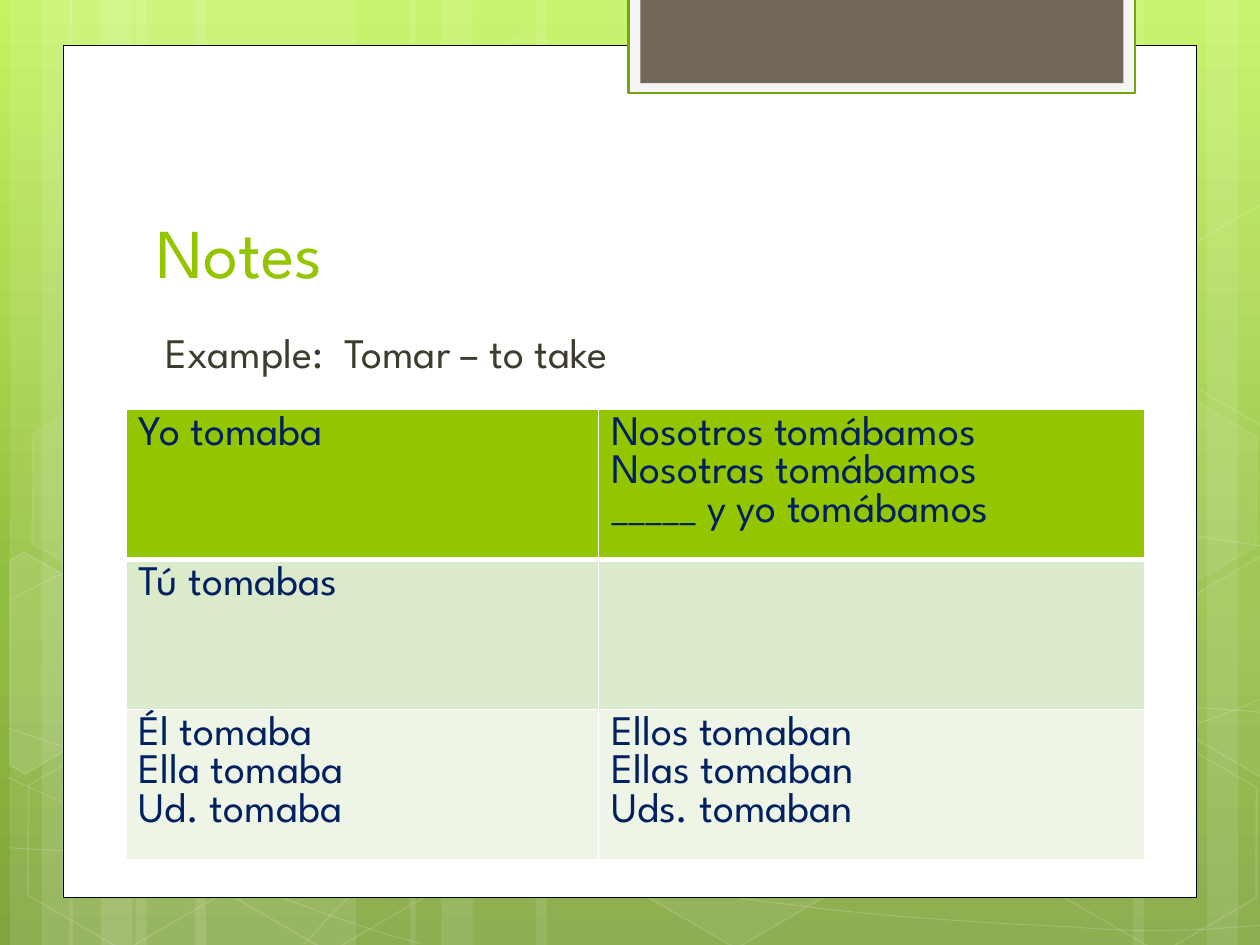
from collections import namedtuple
from copy import deepcopy
from math import cos, radians, sin

from pptx import Presentation
from pptx.dml.color import RGBColor
from pptx.enum.shapes import MSO_SHAPE
from pptx.enum.text import MSO_ANCHOR, PP_ALIGN
from pptx.oxml.ns import qn
from pptx.util import Cm, Pt
from lxml.etree import SubElement

Box = namedtuple("Box", "left top width height")

FONT = "League Spartan"
COLORS = {
    "sky": "C3F35F", "leaf": "93BF3F", "moss": "81A53E",
    "white": "FFFFFF", "black": "000000", "mist": "F5F5F5",
    "tab_line": "74A510", "tab": "71685A",
    "accent": "94C600", "body": "3E3D2D", "navy": "002060",
    "band_dark": "DCEACC", "band_light": "EEF5E7",
}
SLIDE = Box(0, 0, 25.4, 19.05)
TILT = 30

# a start point, then two handles and an end point for each curve
CURVES = [
    [(0.18, 17.09), (1.55, 17.17), (2.92, 17.25), (4.83, 17.22), (6.73, 17.2), (9.09, 17.14),
     (11.63, 16.89), (14.17, 16.64), (17.78, 16.15), (20.12, 15.67), (22.43, 15.19),
     (24.82, 14.43), (25.58, 14)],
    [(0.18, 12.12), (0.91, 11.71), (1.65, 11.33), (3.07, 10.95), (4.52, 10.57), (6.58, 10.01),
     (8.81, 9.83), (11.07, 9.65), (13.82, 9.63), (16.61, 9.83), (19.41, 10.03),
     (24.05, 10.82), (25.58, 11.02)],
    [(0.15, 15.67), (3.23, 17.07), (6.27, 18.47), (8.48, 19.02)],
    [(0.18, 14.68), (0.97, 14.96), (1.78, 15.24), (3.25, 15.65), (4.72, 16.03), (6.93, 16.66),
     (9.07, 17.09), (11.18, 17.53), (13.84, 17.98), (15.95, 18.24), (18.06, 18.52),
     (20.32, 18.62), (21.67, 18.69), (22.99, 18.8), (23.34, 18.75), (24, 18.75),
     (24.66, 18.72), (25.12, 18.67), (25.58, 18.64)],
    [(6.15, 19.02), (6.6, 18.52), (7.06, 18.01), (7.67, 17.55), (8.28, 17.09), (9.14, 16.59),
     (9.86, 16.23), (10.57, 15.88), (11, 15.72), (11.94, 15.47), (12.85, 15.21),
     (14.55, 14.86), (15.44, 14.68), (16.36, 14.5), (16.48, 14.5), (17.27, 14.45),
     (18.06, 14.38), (19.3, 14.3), (20.17, 14.27), (21.06, 14.25), (22.5, 14.27),
     (22.5, 14.27), (22.5, 14.27), (24.21, 14.27), (24.21, 14.27), (24.66, 14.3),
     (25.1, 14.33), (25.32, 14.35), (25.55, 14.38), (25.48, 14.35), (25.55, 14.38)],
]
# left, top, fill opacity, line opacity
HEXAGONS = [
    (8.48, 0.91, 4, 8), (12.62, 14.96, 6, 12), (0.28, 15.01, 0, 12), (0.36, 7.92, 7, 8),
    (4.42, 15.04, 0, 12), (19.13, 11.51, 10, 12), (21.18, 15.06, 0, 12), (21.18, 7.98, 7, 8),
]
LEFT_CUT = [(0.2, 11.3), (0.48, 11.13), (2.44, 12.24), (2.41, 14.48), (0.51, 15.6), (0.2, 15.42)]
RIGHT_CUT = [(23.52, 12.32), (25.43, 11.2), (25.63, 11.33), (25.63, 15.57), (25.45, 15.67),
             (23.52, 14.55)]
CONJUGATION = [
    [["Yo tomaba"], ["Nosotros tomábamos", "Nosotras tomábamos", "_____ y yo tomábamos"]],
    [["Tú tomabas"], []],
    [["Él tomaba", "Ella tomaba", "Ud. tomaba"],
     ["Ellos tomaban", "Ellas tomaban", "Uds. tomaban"]],
]


def rgb(name):
    return RGBColor.from_string(COLORS[name])


def paint(fill, color, opacity=100):
    """Fill solidly with a named colour; opacity is a percentage and 0 means no fill."""
    if not opacity:
        fill.background()
        return
    fill.solid()
    fill.fore_color.rgb = rgb(color)
    if opacity < 100:
        swatch = fill._xPr.find(".//" + qn("a:srgbClr"))
        SubElement(swatch, qn("a:alpha"), val=str(opacity * 1000))


def style(shape, fill, line=None, width=1, fill_opacity=100, line_opacity=100):
    shape.shadow.inherit = False
    paint(shape.fill, fill, fill_opacity)
    if line:
        shape.line.width = Pt(width)
        paint(shape.line.fill, line, line_opacity)
    else:
        shape.line.fill.background()


def add_panel(slide, box, kind=MSO_SHAPE.RECTANGLE, **look):
    panel = slide.shapes.add_shape(kind, *map(Cm, box))
    style(panel, **look)
    return panel


def add_outline(slide, points, closed, **look):
    start, *rest = [(Cm(x), Cm(y)) for x, y in points]
    builder = slide.shapes.build_freeform(*start)
    builder.add_line_segments(rest, close=closed)
    outline = builder.convert_to_shape()
    style(outline, "white", "white", **look)
    return outline


def add_curve(slide, knots, **look):
    """Outline whose segments are turned, three by three, into cubic curves."""
    outline = add_outline(slide, knots, False, **look)
    route = outline._element.find(".//" + qn("a:path"))
    segments = route.findall(qn("a:lnTo"))
    for i in range(0, len(segments), 3):
        cubic = SubElement(route, qn("a:cubicBezTo"))
        for segment in segments[i:i + 3]:
            cubic.append(segment[0])
            route.remove(segment)


def add_cut_hexagon(slide, points, center, **look):
    """Draw the outline upright about its centre, then tilt it into place."""
    c, s = cos(radians(TILT)), sin(radians(TILT))
    offsets = [(x - center[0], y - center[1]) for x, y in points]
    upright = [(center[0] + x * c + y * s, center[1] - x * s + y * c) for x, y in offsets]
    add_outline(slide, upright, True, line_opacity=12, **look).rotation = TILT


def write(frame, lines, color, size=24, space_before=0, indent=0, leading=None):
    for number, line in enumerate(lines):
        paragraph = frame.add_paragraph() if number else frame.paragraphs[0]
        paragraph.alignment = PP_ALIGN.LEFT
        paragraph.space_before = Pt(space_before)
        if leading:
            paragraph.line_spacing = Pt(leading)
        if indent:
            paragraph._p.get_or_add_pPr().set("marL", str(Cm(indent)))
        run = paragraph.add_run()
        run.text = line
        run.font.name, run.font.size, run.font.bold = FONT, Pt(size), False
        run.font.color.rgb = rgb(color)


def set_gradient(slide):
    fill = slide.background.fill
    fill.gradient()
    fill.gradient_angle = 270
    stop_list = slide.element.find(".//" + qn("a:gsLst"))
    stop_list.append(deepcopy(stop_list[-1]))
    for stop, (color, position) in zip(fill.gradient_stops,
                                       [("sky", 0), ("leaf", 0.62), ("moss", 1)]):
        stop.color.rgb = rgb(color)
        stop.position = position


def add_backdrop(slide, box):
    """Translucent stripes, curves and hexagons over the gradient."""
    set_gradient(slide)
    for origin, wide, mirrored in [(0.2, 4.44, False), (1.4, 4.44, False),
                                   (25.6, 4.44, True), (8.26, 7.82, False)]:
        for offset, width in [(2.54, wide), (0, 1.27), (0.64, 2.12)]:
            left = origin - offset - width if mirrored else origin + offset
            stripe = add_panel(slide, Box(box.left + left, box.top, width, box.height),
                               fill="white", fill_opacity=10)
            stripe.rotation = 180 if mirrored else 0
    for knots in CURVES:
        add_curve(slide, knots, width=0.5, fill_opacity=0, line_opacity=20)
    for left, top, fill_opacity, line_opacity in HEXAGONS:
        hexagon = add_panel(slide, Box(box.left + left, box.top + top, 4.44, 3.86),
                            MSO_SHAPE.HEXAGON, fill="white", line="white",
                            fill_opacity=fill_opacity, line_opacity=line_opacity)
        hexagon.adjustments[0] = 0.285
        hexagon.rotation = TILT
    upper_cut = [(x, y - 7.09) for x, y in RIGHT_CUT]
    for points, center, opacity in [(LEFT_CUT, (0.91, 13.59), 10), (RIGHT_CUT, (25.02, 13.21), 4),
                                    (upper_cut, (25.02, 6.12), 0)]:
        add_cut_hexagon(slide, points, center, fill_opacity=opacity)


def add_card(slide, box):
    """White page with the tab that hangs from the top edge."""
    add_panel(slide, box, fill="white", line="black", width=0.5)
    tab = Box(box.left + 11.4, box.top - 0.96, 10.21, 1.93)
    add_panel(slide, tab, fill="mist", line="tab_line", width=1.25)
    add_panel(slide, Box(tab.left + 0.24, tab.top, 9.74, 1.73), fill="tab")


def add_heading(slide, box):
    title = slide.shapes.title
    title.left, title.top, title.width, title.height = map(Cm, box)
    title.element.getparent().append(title.element)
    title.text_frame.vertical_anchor = MSO_ANCHOR.BOTTOM
    write(title.text_frame, ["Notes"], "accent", size=40)


def add_example(slide, box):
    example = slide.shapes.add_textbox(*map(Cm, box))
    example.text_frame.word_wrap = True
    write(example.text_frame, ["Example:  Tomar – to take"], "body",
          space_before=5, indent=0.18)


def set_borders(cell, widths):
    properties = cell._tc.get_or_add_tcPr()
    for side, width in widths.items():
        border = SubElement(properties, qn("a:ln" + side), w=str(Pt(width)))
        SubElement(SubElement(border, qn("a:solidFill")), qn("a:srgbClr"), val=COLORS["white"])


def add_conjugation(slide, box):
    table = slide.shapes.add_table(3, 2, *map(Cm, box)).table
    table.horz_banding = False
    for column, width in zip(table.columns, (9.53, box.width - 9.53)):
        column.width = Cm(width)
    for r, (forms, color) in enumerate(zip(CONJUGATION, ("accent", "band_dark", "band_light"))):
        table.rows[r].height = Cm(box.height / 3)
        for c, lines in enumerate(forms):
            cell = table.cell(r, c)
            set_borders(cell, {"L": 1, "R": 1, "T": 3 if r == 1 else 1, "B": 1 if r else 3})
            paint(cell.fill, color)
            write(cell.text_frame, lines, "navy", leading=22)


def main():
    deck = Presentation()
    deck.slide_width, deck.slide_height = Cm(SLIDE.width), Cm(SLIDE.height)
    slide = deck.slides.add_slide(deck.slide_layouts[5])
    add_backdrop(slide, SLIDE)
    add_card(slide, Box(1.27, 0.91, 22.86, 17.19))
    add_heading(slide, Box(2.9, 2.84, 19.51, 3.18))
    add_example(slide, Box(2.9, 6.45, 20.4, 9.75))
    add_conjugation(slide, Box(2.54, 8.26, 20.53, 9.07))
    deck.save("out.pptx")


if __name__ == "__main__":
    main()
